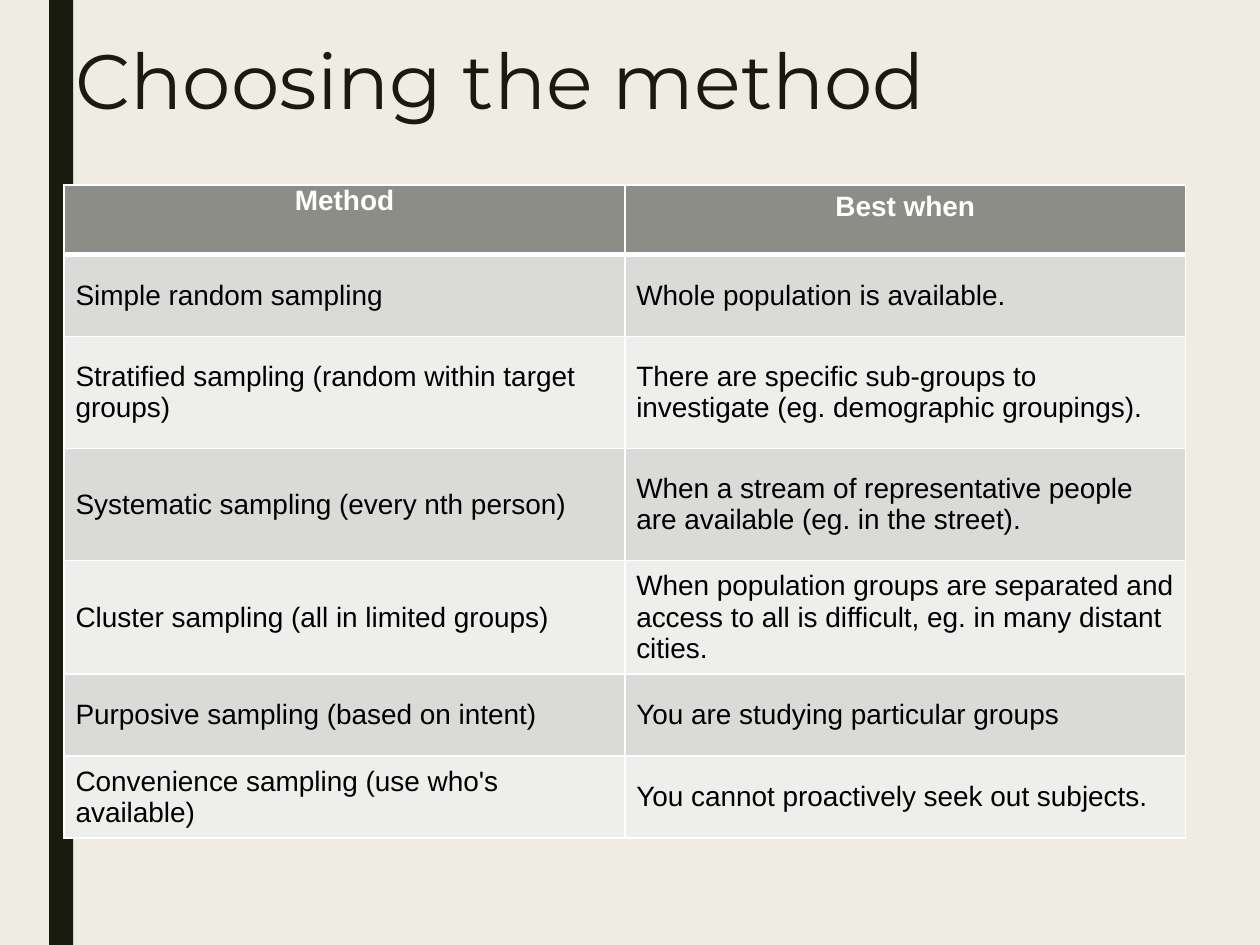
from lxml.etree import SubElement
from pptx import Presentation
from pptx.dml.color import RGBColor
from pptx.enum.shapes import MSO_SHAPE
from pptx.enum.text import MSO_ANCHOR, PP_ALIGN
from pptx.oxml.ns import qn
from pptx.util import Inches, Pt

INK, PAPER, WHITE = "191B0E", "EFEDE3", "FFFFFF"
HEAD, BANDS = "8C8D86", ("EEEEED", "DADBD9")
ROWS = [
    (0.55, "Method", "Best when"),
    (0.65, "Simple random sampling", "Whole population is available."),
    (0.89, "Stratified sampling (random within target groups)",
     "There are specific sub-groups to investigate (eg. demographic groupings)."),
    (0.89, "Systematic sampling (every nth person)",
     "When a stream of representative people are available (eg. in the street)."),
    (0.89, "Cluster sampling (all in limited groups)",
     "When population groups are separated and access to all is difficult, "
     "eg. in many distant cities."),
    (0.65, "Purposive sampling (based on intent)", "You are studying particular groups"),
    (0.65, "Convenience sampling (use who's available)",
     "You cannot proactively seek out subjects."),
]


def paint(fill, color):
    """Give a fill one solid colour."""
    fill.solid()
    fill.fore_color.rgb = RGBColor.from_string(color)


def write(frame, text, font="Arial", size=16, color="000000", bold=False,
          align=PP_ALIGN.LEFT, spacing=None):
    """Put formatted text in the first paragraph of a frame."""
    para = frame.paragraphs[0]
    para.alignment = align
    para.line_spacing = spacing
    run = para.add_run()
    run.text = text
    run.font.name, run.font.size, run.font.bold = font, Pt(size), bold
    run.font.color.rgb = RGBColor.from_string(color)


def border(cell, **widths):
    """Draw white lines of the given point widths around a cell."""
    props = cell._tc.get_or_add_tcPr()
    for side in "LRTB":
        line = SubElement(props, qn(f"a:ln{side}"), w=str(Pt(widths.get(side, 1))))
        SubElement(SubElement(line, qn("a:solidFill")), qn("a:srgbClr"), val=WHITE)


def add_bar(slide):
    """Add the dark vertical bar at the left."""
    bar = slide.shapes.add_shape(
        MSO_SHAPE.RECTANGLE, Inches(0.39), 0, Inches(0.19), Inches(7.5))
    bar.shadow.inherit = False
    paint(bar.fill, INK)
    bar.line.fill.background()


def add_title(slide, text):
    """Add the slide heading."""
    box = slide.shapes.add_textbox(Inches(0.5), Inches(0.3), Inches(8.17), Inches(1.09))
    box.text_frame.word_wrap = True
    write(box.text_frame, text, font="Montserrat", size=44, color=INK, spacing=0.89)


def fill_cell(cell, text, row):
    """Format a cell as a heading or as part of a banded row."""
    cell.margin_left = cell.margin_right = Inches(0.09)
    cell.margin_top = cell.margin_bottom = Inches(0.05)
    if row == 0:
        border(cell, B=3)
        paint(cell.fill, HEAD)
        write(cell.text_frame, text, color=WHITE, bold=True, align=PP_ALIGN.CENTER)
    else:
        border(cell, T=3 if row == 1 else 1)
        paint(cell.fill, BANDS[row % 2])
        cell.vertical_anchor = MSO_ANCHOR.MIDDLE
        write(cell.text_frame, text)


def add_grid(slide):
    """Add the table of sampling methods."""
    total = sum(height for height, *_ in ROWS)
    table = slide.shapes.add_table(
        len(ROWS), 2, Inches(0.51), Inches(1.47), Inches(8.9), Inches(total)).table
    for row, (height, *texts) in enumerate(ROWS):
        table.rows[row].height = Inches(height)
        for col, text in enumerate(texts):
            fill_cell(table.cell(row, col), text, row)
    first = table.cell(0, 0)
    first.margin_left = first.margin_right = first.margin_top = first.margin_bottom = 0


def main():
    """Build and save the slide."""
    deck = Presentation()
    deck.slide_width, deck.slide_height = Inches(10), Inches(7.5)
    slide = deck.slides.add_slide(deck.slide_layouts[6])
    paint(slide.background.fill, PAPER)
    add_bar(slide)
    add_title(slide, "Choosing the method")
    add_grid(slide)
    deck.save("out.pptx")


if __name__ == "__main__":
    main()
